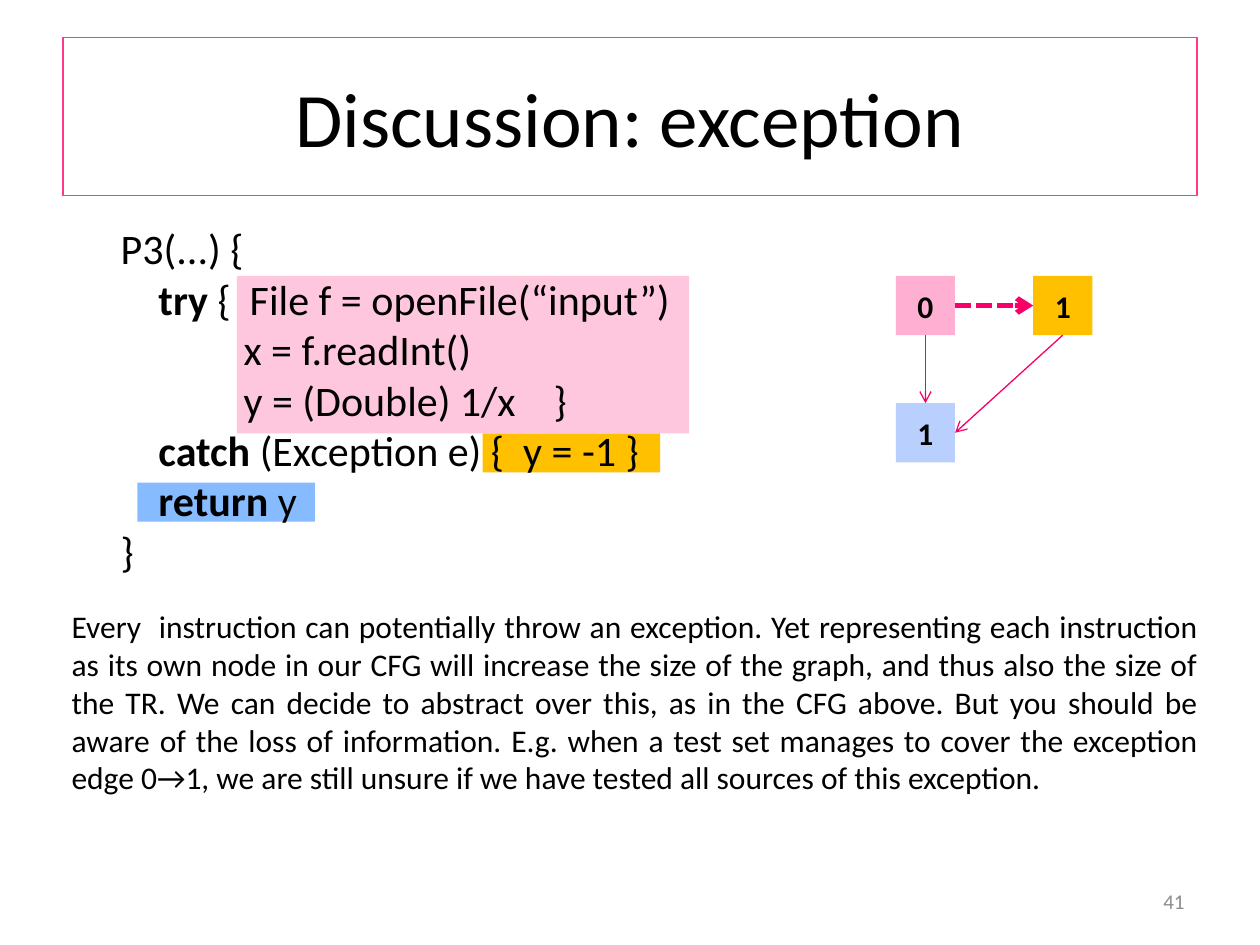
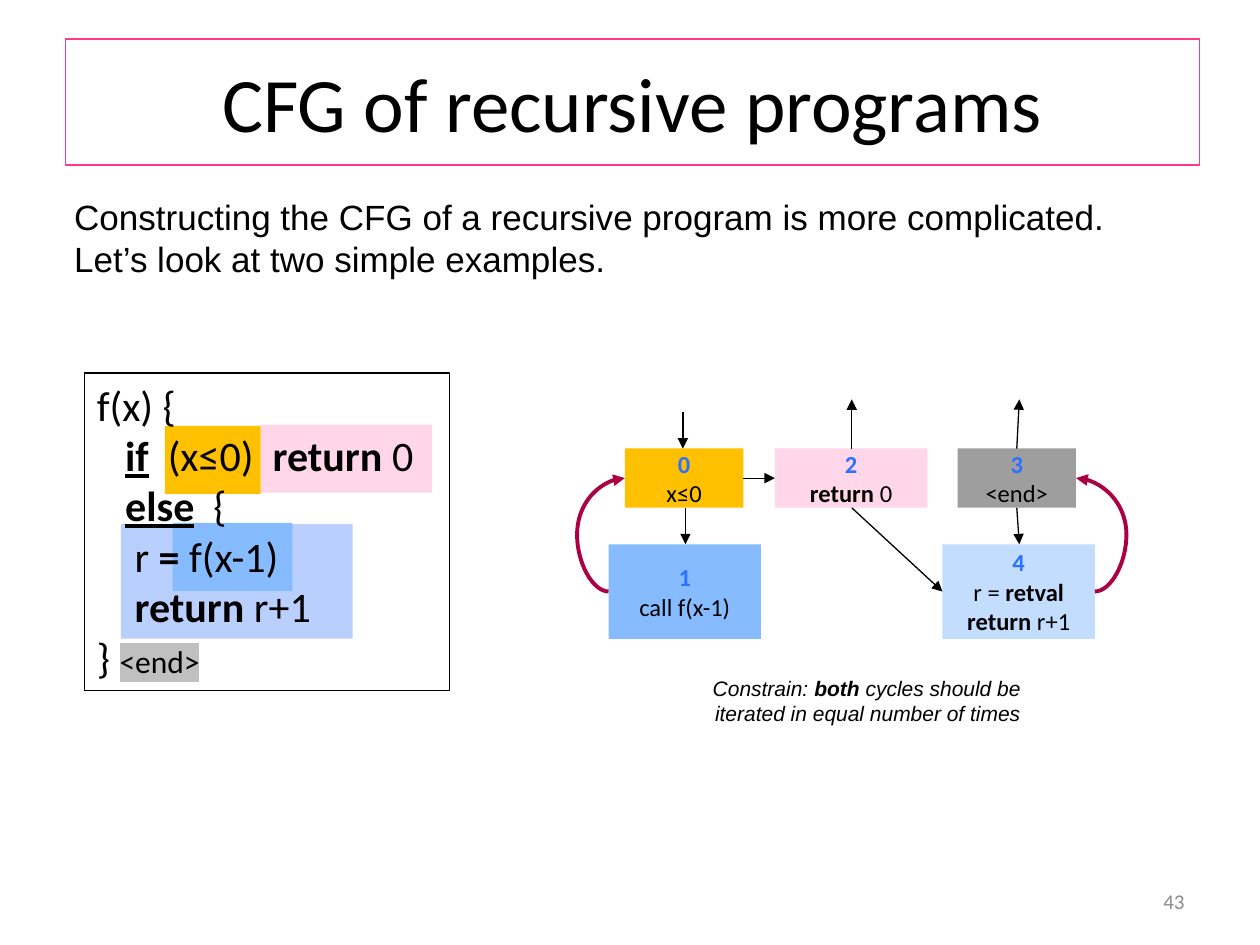
import lxml.etree
import pptx
import pptx.dml.color
import pptx.enum.dml
import pptx.enum.shapes
import pptx.enum.text
import pptx.oxml.ns
import pptx.util

RGB = pptx.dml.color.RGBColor
BLACK = RGB(0, 0, 0)
GREY = RGB(0x8C, 0x8C, 0x8C)
STONE = RGB(0x9E, 0x9E, 0x9E)
PINK = RGB(0xFF, 0x38, 0x8C)
ROSE = RGB(0xFF, 0xC7, 0xDD)
BLUSH = RGB(0xFF, 0xD7, 0xE8)
CANDY = RGB(0xFF, 0xAF, 0xD1)
GOLD = RGB(0xFF, 0xC0, 0)
SKY = RGB(0x87, 0xBB, 0xFF)
MIST = RGB(0xB9, 0xD0, 0xFF)
ICE = RGB(0xC3, 0xDD, 0xFF)
BLUE = RGB(0x2C, 0x71, 0xFF)
RED = RGB(0xF9, 0, 0x69)
WINE = RGB(0xAB, 0, 0x43)

ALIGN = pptx.enum.text.PP_ALIGN
MID = pptx.enum.text.MSO_ANCHOR.MIDDLE
TOP = pptx.enum.text.MSO_ANCHOR.TOP
RECT = pptx.enum.shapes.MSO_SHAPE.RECTANGLE
LINE = pptx.enum.shapes.MSO_CONNECTOR.STRAIGHT
CURVE = pptx.enum.shapes.MSO_CONNECTOR.CURVE
DASH = pptx.enum.dml.MSO_LINE.SQUARE_DOT
qn = pptx.oxml.ns.qn

deck = pptx.Presentation()
deck.slide_width = pptx.util.Inches(10)
deck.slide_height = pptx.util.Inches(7.5)
COL = deck.slide_width / 10
ROW = deck.slide_height / 7.5
SPACE = 0.075 * COL  # one blank of code at 24 points


def put(slide, place, lines=(), size=18, fill=None, edge=None, align=ALIGN.CENTER,
        anchor=MID, face="Calibri", color=BLACK, steps=()):
    """Add a box; *stars* mark bold text, *_stars* bold and underlined."""
    x, y, w, h = place
    spot = [round(n) for n in (x * COL, y * ROW, w * COL, h * ROW)]
    if fill or edge:
        box = slide.shapes.add_shape(RECT, *spot)
        box.shadow.inherit = False
        box.fill.background()
        box.line.fill.background()
        if fill:
            box.fill.solid()
            box.fill.fore_color.rgb = fill
        if edge:
            box.line.color.rgb = edge
            box.line.width = pptx.util.Pt(0.75)
    else:
        box = slide.shapes.add_textbox(*spot)
    frame = box.text_frame
    frame.word_wrap = True
    frame.vertical_anchor = anchor
    for i, line in enumerate(lines):
        para = frame.add_paragraph() if i else frame.paragraphs[0]
        para.alignment = align
        para.font.name = face
        para.font.size = pptx.util.Pt(size)
        para.font.color.rgb = color
        if steps:
            para._p.get_or_add_pPr().set("marL", str(round(steps[i] * SPACE)))
        for j, part in enumerate(line.split("*")):
            if part:
                run = para.add_run()
                run.text = part.lstrip("_")
                if j % 2:
                    run.font.bold = True
                if part.startswith("_"):
                    run.font.underline = True
    return frame


def link(slide, start, end, color=BLACK, width=0.75, head="triangle", bulge=0):
    """Add an arrow; a bulge bows it out beyond its start by that many columns."""
    ends = [round(n) for n in (start[0] * COL, start[1] * ROW, end[0] * COL, end[1] * ROW)]
    wire = slide.shapes.add_connector(CURVE if bulge else LINE, *ends)
    wire.line.color.rgb = color
    wire.line.width = pptx.util.Pt(width)
    props = wire._element.spPr
    if bulge:
        share = round(-bulge / abs(end[0] - start[0]) * 100000)
        guides = props.find(qn("a:prstGeom")).get_or_add_avLst()
        lxml.etree.SubElement(guides, qn("a:gd"), name="adj1", fmla=f"val {share}")
    lxml.etree.SubElement(wire.line._get_or_add_ln(), qn("a:tailEnd"), type=head)
    lxml.etree.SubElement(props, qn("a:effectLst"))
    return wire


# Shared parts: title frame and page number
heads = [
    ("Discussion: exception", (0.5, 0.3, 9, 1.25), "41"),
    ("CFG of recursive programs", (0.52, 0.31, 9, 1), "43"),
]
slides = []
for title, place, page in heads:
    slide = deck.slides.add_slide(deck.slide_layouts[6])
    put(slide, place, [title], 44, edge=PINK)
    put(slide, (7.17, 6.95, 2.33, 0.4), [page], 12, align=ALIGN.RIGHT, color=GREY)
    slides.append(slide)
first, second = slides

# Exceptions: code over its coloured blocks
for place, fill in [
    ((3.83, 3.44, 1.41, 0.31), GOLD),
    ((1.09, 3.83, 1.41, 0.31), SKY),
    ((1.88, 2.19, 3.59, 1.25), ROSE),
]:
    put(first, place, fill=fill)
code = [
    "P3(...) {",
    "*try* {  File f = openFile(“input”)",
    "x = f.readInt()",
    "y = (Double) 1/x    }",
    "*catch* (Exception e) {  y = -1 }",
    "*return* y",
    "}",
]
put(first, (0.86, 1.72, 4.8, 2.93), code, 24, align=ALIGN.LEFT, anchor=TOP,
    steps=(0, 4, 13, 13, 4, 4, 0))
put(first, (0.47, 4.77, 9.14, 1.62), [
    "Every  instruction can potentially throw an exception. Yet representing each "
    "instruction as its own node in our CFG will increase the size of the graph, and "
    "thus also the size of the TR. We can decide to abstract over this, as in the CFG "
    "above. But you should be aware of the loss of information. E.g. when a test set "
    "manages to cover the exception edge 0→1, we are still unsure if we have tested "
    "all sources of this exception."
], align=ALIGN.JUSTIFY, anchor=TOP)

# Exceptions: graph
side = 0.47
left, right, high, low = 7.11, 8.2, 2.19, 3.2
for x, y, name, fill in [
    (left, low, "1", MIST), (right, high, "1", GOLD), (left, high, "0", CANDY),
]:
    put(first, (x, y, side, side), [f"*{name}*"], fill=fill)
half = side / 2
throw = link(first, (left + side, high + half), (right, high + half), RED, 3, "arrow")
throw.line.dash_style = DASH
link(first, (right + half, high + side), (left + side, low + half), RED, head="arrow")
link(first, (left + half, high + side), (left + half, low), RED, head="arrow")

# Recursion: code over its coloured blocks
put(second, (0.49, 1.5, 8.75, 0.77), [
    "Constructing the CFG of a recursive program is more complicated. "
    "Let’s look at two simple examples."
], 20, align=ALIGN.LEFT, anchor=TOP, face="Arial")
for place, fill in [
    ((0.96, 4.16, 1.84, 0.91), MIST),
    ((1.37, 4.15, 0.95, 0.54), SKY),
    ((1.31, 3.38, 0.76, 0.54), GOLD),
    ((2.07, 3.37, 1.36, 0.54), BLUSH),
]:
    put(second, place, fill=fill)
code = [
    "f(x) {",
    "*_if*  (x≤0)  *return* 0",
    "*_else*  {",
    "r* = *f(x-1)",
    "*return* r+1",
    "} ",
]
frame = put(second, (0.67, 2.96, 2.9, 2.52), code, 24, edge=BLACK, align=ALIGN.LEFT,
            anchor=TOP, steps=(0, 3, 3, 4, 4, 0))
run = frame.paragraphs[-1].add_run()
run.text = "<end>"
run.font.size = pptx.util.Pt(18)
mark = lxml.etree.SubElement(run._r.get_or_add_rPr(), qn("a:highlight"))
lxml.etree.SubElement(mark, qn("a:srgbClr"), val="C0C0C0")

# Recursion: graph
slim, wide, short, tall = 0.94, 1.21, 0.47, 0.75
high, low = 3.56, 4.32
nodes = [
    (4.96, high, slim, short, GOLD, ["x≤0"]),
    (4.83, low, wide, tall, SKY, ["call f(x-1)"]),
    (6.15, high, wide, short, BLUSH, ["*return* 0"]),
    (7.6, high, slim, short, STONE, ["<end>"]),
    (7.48, low, wide, tall, ICE, ["r = *retval*", "*return* r+1"]),
]
for i, (x, y, w, h, fill, lines) in enumerate(nodes):
    frame = put(second, (x, y, w, h), [f"*{i}*"] + lines, 14, fill=fill)
    frame.paragraphs[0].font.color.rgb = BLUE

mid, base, deep = high + short / 2, high + short, low + tall / 2
for start, end in [
    ((5.9, mid), (6.15, mid)),
    ((5.44, base), (5.44, low)),
    ((5.42, 3.27), (5.42, high)),
    ((6.76, high), (6.76, 3.17)),
    ((8.07, high), (8.09, 3.17)),
    ((8.07, base), (8.09, low)),
    ((6.76, base), (7.48, deep)),
]:
    link(second, start, end)
for start, end in [(4.83, 4.96), (8.69, 8.54)]:
    link(second, (start, deep), (end, mid), WINE, 2.25, bulge=0.25)

frame = put(second, (5.31, 5.31, 2.89, 0.5), [
    "Constrain: *both* cycles should be iterated in equal number of times"
], 12, align=ALIGN.RIGHT, anchor=TOP, face="Arial")
frame.paragraphs[0].font.italic = True

deck.save("out.pptx")
